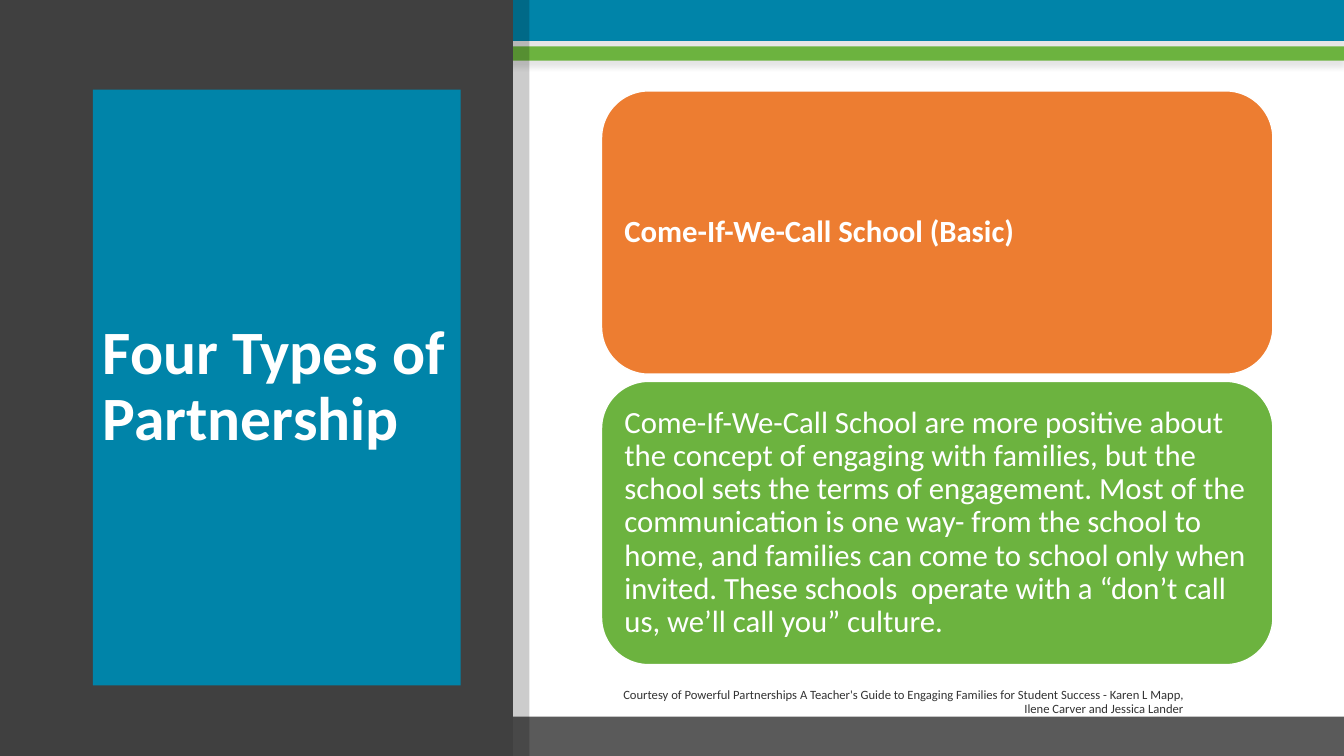
from dataclasses import dataclass
from typing import Optional

from lxml.etree import SubElement
from pptx import Presentation
from pptx.dml.color import RGBColor
from pptx.enum.shapes import MSO_SHAPE as Preset
from pptx.enum.text import MSO_ANCHOR as Anchor, MSO_AUTO_SIZE as AutoSize, PP_ALIGN as Align
from pptx.oxml.ns import qn
from pptx.util import Cm, Pt

COLOURS = {
    "blue": "0084A9", "green": "6CB33F", "orange": "ED7D31",
    "footer": "5A5A5A", "panel": "404040", "credit": "333333",
    "black": "000000", "white": "FFFFFF",
}
WIDTH, HEIGHT = 33.87, 19.05
PANEL_WIDTH = 12.93
CARD_LEFT, CARD_TOP, CARD_WIDTH, CARD_HEIGHT, CARD_STEP = 15.16, 2.29, 16.92, 7.14, 7.32
TITLE_BOX = (2.34, 2.26, 9.27, 15.01)
CREDIT_BOX = (CARD_LEFT, 17.22, 14.91, 1.02)


@dataclass
class Band:
    left: float
    top: float
    width: float
    height: float
    fill: str
    line: Optional[str] = None
    shadow: bool = False
    opacity: int = 100


@dataclass
class Card:
    text: str
    fill: str
    bold: bool


BANDS = [
    Band(0, 0, WIDTH, 1.02, "blue", line="blue", shadow=True),
    Band(0, 1.17, WIDTH, 0.36, "green", shadow=True),
    Band(0, 18.06, WIDTH, 0.99, "footer"),
    Band(0, 0, PANEL_WIDTH, HEIGHT, "panel"),
    Band(PANEL_WIDTH, 0, 0.41, HEIGHT, "black", opacity=20),
]
CARDS = [
    Card("Come-If-We-Call School (Basic)", "orange", True),
    Card("Come-If-We-Call School are more positive about the concept of engaging with "
         "families, but the school sets the terms of engagement. Most of the communication "
         "is one way- from the school to home, and families can come to school only when "
         "invited. These schools  operate with a “don’t call us, we’ll call you” culture.",
         "green", False),
]
CREDIT = ("Courtesy of Powerful Partnerships A Teacher's Guide to Engaging Families for "
          "Student Success - Karen L Mapp, Ilene Carver and Jessica Lander")


def colour(name: str) -> RGBColor:
    return RGBColor.from_string(COLOURS[name])


def set_attributes(target, values: dict) -> None:
    for name, value in values.items():
        setattr(target, name, value)


def place(shape, left: float, top: float, width: float, height: float) -> None:
    set_attributes(shape, {"left": Cm(left), "top": Cm(top),
                           "width": Cm(width), "height": Cm(height)})


def set_opacity(colour_element, percent: int) -> None:
    SubElement(colour_element, qn("a:alpha"), val=str(percent * 1000))


def add_soft_shadow(shape) -> None:
    effects = shape._element.spPr.find(qn("a:effectLst"))
    shadow = SubElement(effects, qn("a:outerShdw"), blurRad=str(Pt(4)), dist=str(Pt(4)),
                        dir="5400000", algn="t", rotWithShape="0")
    set_opacity(SubElement(shadow, qn("a:srgbClr"), val=COLOURS["black"]), 9)


def add_filled_shape(slide, preset: Preset, band: Band):
    shape = slide.shapes.add_shape(preset, Cm(band.left), Cm(band.top),
                                   Cm(band.width), Cm(band.height))
    shape.shadow.inherit = False
    shape.fill.solid()
    shape.fill.fore_color.rgb = colour(band.fill)
    if band.line:
        shape.line.color.rgb = colour(band.line)
        shape.line.width = Pt(1)
    else:
        shape.line.fill.background()
    if band.shadow:
        add_soft_shadow(shape)
    if band.opacity < 100:
        set_opacity(shape._element.spPr.find(f"{qn('a:solidFill')}/{qn('a:srgbClr')}"),
                    band.opacity)
    return shape


def write_text(shape, text: str, size: float, text_colour: str, bold: bool = False,
               align: Align = Align.LEFT, anchor: Anchor = Anchor.MIDDLE,
               margins: tuple[float, float] = (0.25, 0.13)) -> None:
    """Fill the shape with one paragraph; margins are horizontal and vertical, in cm."""
    across, down = map(Cm, margins)
    frame = shape.text_frame
    set_attributes(frame, {"text": text, "word_wrap": True, "auto_size": AutoSize.NONE,
                           "vertical_anchor": anchor, "margin_left": across,
                           "margin_right": across, "margin_top": down, "margin_bottom": down})
    paragraph = frame.paragraphs[0]
    set_attributes(paragraph, {"alignment": align, "line_spacing": 0.9})
    font = paragraph.runs[0].font
    set_attributes(font, {"name": "Calibri", "size": Pt(size), "bold": bold})
    font.color.rgb = colour(text_colour)


def add_title(slide) -> None:
    title = slide.shapes.title
    slide.shapes._spTree.append(title._element)  # bring in front of the dark panel
    place(title, *TITLE_BOX)
    title.fill.solid()
    title.fill.fore_color.rgb = colour("blue")
    write_text(title, "Four Types of Partnership", 44, "white", bold=True)


def add_credit(slide) -> None:
    box = slide.shapes.add_textbox(*map(Cm, CREDIT_BOX))
    write_text(box, CREDIT, 9, "credit", align=Align.RIGHT, anchor=Anchor.TOP)


def add_card(slide, card: Card, row: int) -> None:
    outline = Band(CARD_LEFT, CARD_TOP + row * CARD_STEP, CARD_WIDTH, CARD_HEIGHT,
                   card.fill, line="white")
    shape = add_filled_shape(slide, Preset.ROUNDED_RECTANGLE, outline)
    write_text(shape, card.text, 22, "white", bold=card.bold, margins=(0.23, 0.23))


def main() -> None:
    presentation = Presentation()
    set_attributes(presentation, {"slide_width": Cm(WIDTH), "slide_height": Cm(HEIGHT)})
    slide = presentation.slides.add_slide(presentation.slide_layouts[5])
    for band in BANDS:
        add_filled_shape(slide, Preset.RECTANGLE, band)
    add_title(slide)
    add_credit(slide)
    for row, card in enumerate(CARDS):
        add_card(slide, card, row)
    presentation.save("out.pptx")


if __name__ == "__main__":
    main()
